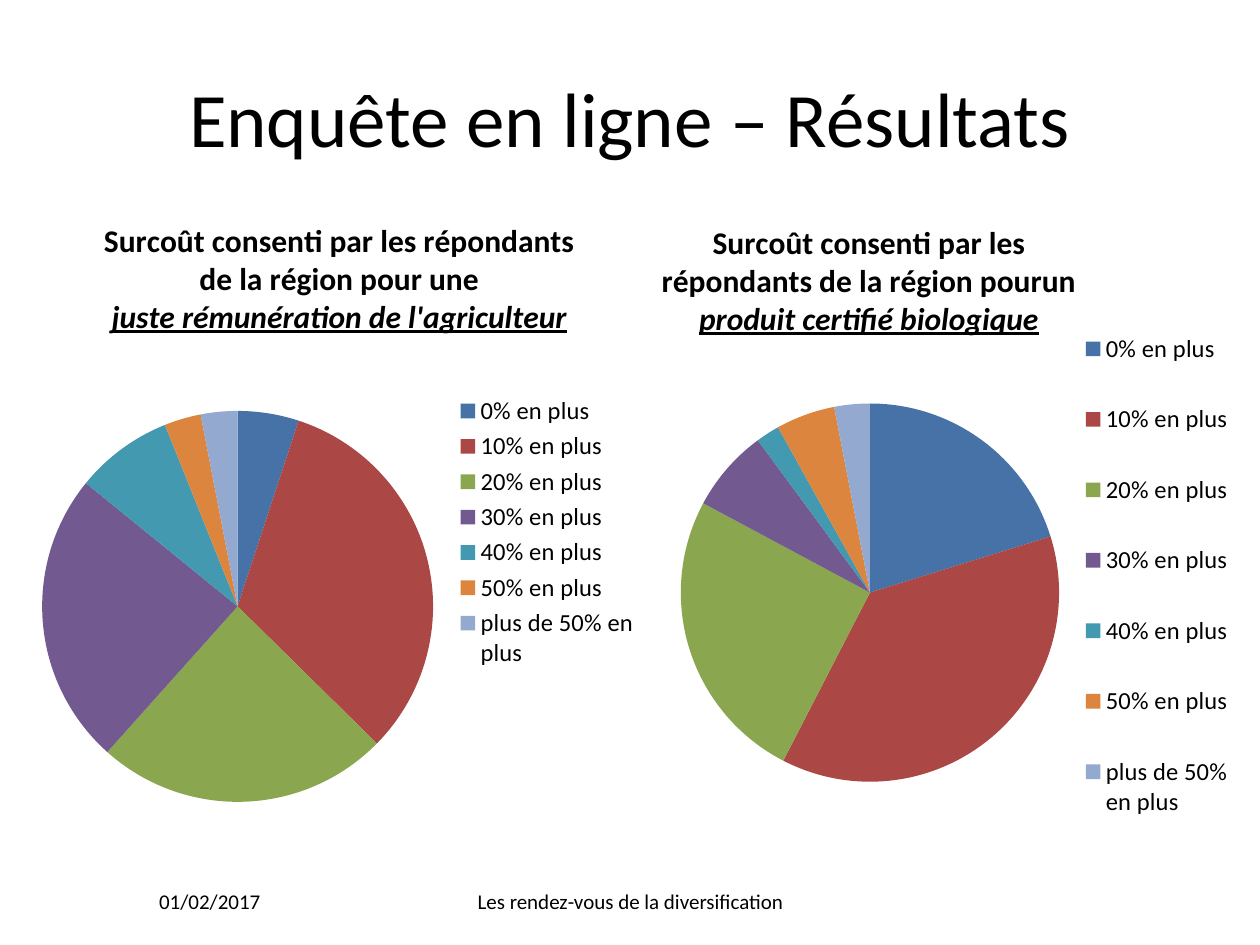
from lxml import etree
from pptx import Presentation
from pptx import util as u
from pptx.chart.data import CategoryChartData
from pptx.dml.color import RGBColor
from pptx.enum import chart as ch, shapes, text
from pptx.oxml.ns import qn

INK = {"text": "000000", "back": "FFFFFF"}
SLICES = {
    "0% en plus": "4672A8",
    "10% en plus": "AB4744",
    "20% en plus": "8AA64F",
    "30% en plus": "725990",
    "40% en plus": "4299B0",
    "50% en plus": "DC853E",
    "plus de 50% en plus": "93A9CF",
}


def write(para, words, size, bold=False, italic=False, line=False):
    """Add a run of formatted text to a paragraph."""
    run = para.add_run()
    run.text = words
    font = run.font
    font.name, font.size = "Calibri", u.Pt(size)
    font.bold, font.italic, font.underline = bold, italic, line
    font.color.rgb = RGBColor.from_string(INK["text"])


def place(part, x, y, w=None, h=None, inner=False):
    """Set a chart part's manual layout, in fractions of the chart."""
    old = part.find(qn("c:layout"))
    if old is not None:
        part.remove(old)
    box = etree.Element(qn("c:layout"))
    man = etree.SubElement(box, qn("c:manualLayout"))
    vals = {"xMode": "edge", "yMode": "edge", "x": x, "y": y, "w": w, "h": h}
    if inner:
        vals = {"layoutTarget": "inner", **vals}
    for tag, val in vals.items():
        if val is not None:
            etree.SubElement(man, qn("c:" + tag)).set("val", str(val))
    # The layout follows the title text or legend position, or leads the plot
    part.insert(0 if inner else 1, box)


prs = Presentation()
prs.slide_width, prs.slide_height = u.Inches(10), u.Inches(7.5)
slide = prs.slides.add_slide(prs.slide_layouts[5])

title = slide.shapes.title
title.left, title.top = u.Inches(0.5), u.Inches(0.3)
title.width, title.height = u.Inches(9), u.Inches(1.25)
title.fill.solid()
title.fill.fore_color.rgb = RGBColor.from_string(INK["back"])
tone = next(title._element.iter(qn("a:srgbClr")))
etree.SubElement(tone, qn("a:alpha")).set("val", "86000")
title.text_frame.vertical_anchor = text.MSO_ANCHOR.MIDDLE
head = title.text_frame.paragraphs[0]
head.alignment = text.PP_ALIGN.CENTER
write(head, "Enquête en ligne – Résultats", 44)

for words, left, width in [
    ("01/02/2017", 0.5, 2.33),
    ("Les rendez-vous de la diversification", 3.42, 3.17),
]:
    box = slide.shapes.add_shape(
        shapes.MSO_SHAPE.RECTANGLE,
        u.Inches(left), u.Inches(6.95), u.Inches(width), u.Inches(0.4))
    box.shadow.inherit = False
    box.fill.solid()
    box.fill.fore_color.rgb = RGBColor.from_string(INK["back"])
    box.line.fill.background()
    frame = box.text_frame
    frame.word_wrap = True
    frame.vertical_anchor = text.MSO_ANCHOR.MIDDLE
    para = frame.paragraphs[0]
    para.alignment = text.PP_ALIGN.CENTER
    write(para, words, 12)

pies = [
    dict(at=(0.2, 1.55, 4.96, 5.35), vals=(5, 32, 24, 24, 8, 3, 3),
         lead="Surcoût consenti par les répondants de la région pour une",
         key="juste rémunération de l'agriculteur", split=True,
         head=(0.12, 0.03), plot=(0.02, 0.32, 0.64, 0.58),
         legend=(0.68, 0.29, 0.31, 0.42)),
    dict(at=(5.08, 1.62, 4.74, 5.46), vals=(20, 37, 25, 7, 2, 5, 3),
         lead="Surcoût consenti par les répondants de la région pourun ",
         key="produit certifié biologique", split=False,
         head=(0.03, 0.02), plot=(0.06, 0.29, 0.65, 0.55),
         legend=(0.73, 0.13, 0.27, 0.82)),
]
for pie in pies:
    data = CategoryChartData()
    data.categories = list(SLICES)
    data.add_series("Series 1", pie["vals"])
    spot = [u.Inches(n) for n in pie["at"]]
    chart = slide.shapes.add_chart(ch.XL_CHART_TYPE.PIE, *spot, data).chart
    chart.font.name, chart.font.size = "Calibri", u.Pt(10)
    chart.font.color.rgb = RGBColor.from_string(INK["text"])

    chart.has_title = True
    frame = chart.chart_title.text_frame
    para = frame.paragraphs[0]
    write(para, pie["lead"], 18, bold=True)
    if pie["split"]:
        para = frame.add_paragraph()
    write(para, pie["key"], 18, bold=True, italic=True, line=True)
    chart.chart_title.include_in_layout = False
    place(chart.chart_title._element, *pie["head"])

    chart.has_legend = True
    legend = chart.legend
    legend.position = ch.XL_LEGEND_POSITION.RIGHT
    legend.include_in_layout = False
    legend.font.name, legend.font.size = "Calibri", u.Pt(14)
    legend.font.color.rgb = RGBColor.from_string(INK["text"])
    place(legend._element, *pie["legend"])

    plot = chart.plots[0]
    plot.vary_by_categories = True
    place(plot._element.getparent(), *pie["plot"], inner=True)
    for i, tint in enumerate(SLICES.values()):
        form = plot.series[0].points[i].format
        form.fill.solid()
        form.fill.fore_color.rgb = RGBColor.from_string(tint)
        form.line.fill.background()

prs.save("out.pptx")
